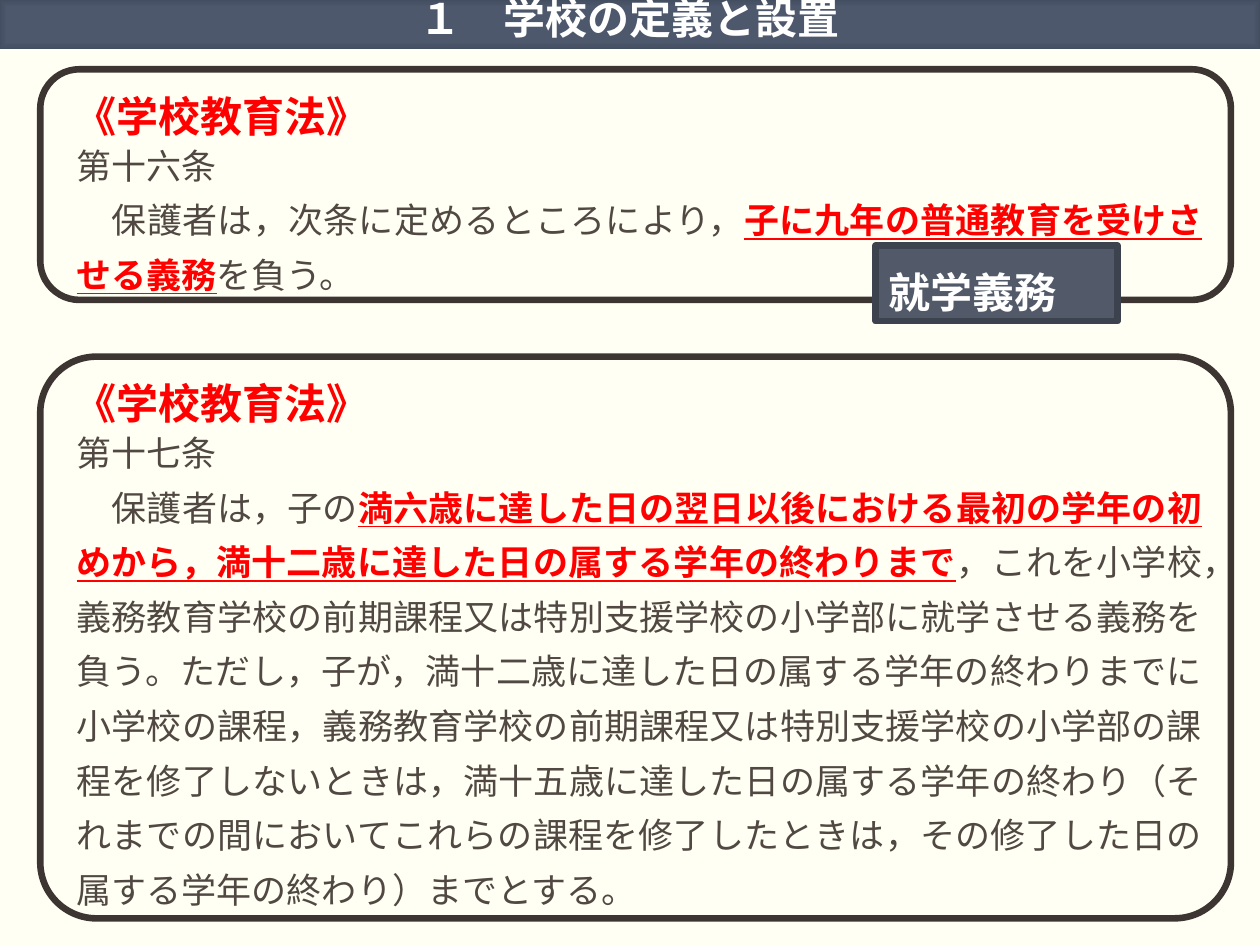
from lxml.etree import SubElement
from pptx import Presentation
from pptx.dml.color import RGBColor
from pptx.enum.shapes import MSO_SHAPE as Shape
from pptx.enum.text import MSO_ANCHOR as Anchor, MSO_AUTO_SIZE as AutoSize, PP_ALIGN as Align
from pptx.oxml.ns import qn
from pptx.util import Pt

RED, WHITE, BODY = "FF0000", "FFFFFF", "514843"
ARTICLE_16 = [
    ("\u3000保護者は，次条に定めるところにより，", False),
    ("子に九年の普通教育を受けさせる義務", True),
    ("を負う。", False),
]
ARTICLE_17 = [
    ("\u3000保護者は，子の", False),
    ("満六歳に達した日の翌日以後における最初の学年の初めから，"
     "満十二歳に達した日の属する学年の終わりまで", True),
    ("，これを小学校，義務教育学校の前期課程又は特別支援学校の小学部に就学させる義務を負う。"
     "ただし，子が，満十二歳に達した日の属する学年の終わりまでに小学校の課程，"
     "義務教育学校の前期課程又は特別支援学校の小学部の課程を修了しないときは，"
     "満十五歳に達した日の属する学年の終わり（それまでの間においてこれらの課程を修了したときは，"
     "その修了した日の属する学年の終わり）までとする。", False),
]


def color(value):
    """Turn a hex string into a colour."""
    return RGBColor.from_string(value)


def style(para, size, ink, bold=False, align=Align.JUSTIFY, spacing=1.3, face="Arial"):
    """Set the alignment, line spacing and font of a paragraph."""
    para.alignment, para.line_spacing = align, spacing
    font = para.font
    font.name, font.size, font.bold = face, Pt(size), bold
    font.color.rgb = color(ink)


def add_box(shapes, kind, left, top, width, height, fill=None, line=None):
    """Add a preset shape with an optional fill and outline."""
    box = shapes.add_shape(kind, Pt(left), Pt(top), Pt(width), Pt(height))
    box.shadow.inherit = False
    if fill:
        box.fill.solid()
        box.fill.fore_color.rgb = color(fill)
    else:
        box.fill.background()
    if line:
        box.line.color.rgb = color(line)
        box.line.width = Pt(3.78)
    else:
        box.line.fill.background()
    return box


def add_text(shapes, left, top, width, height):
    """Add a wrapping text box that grows with its text."""
    frame = shapes.add_textbox(Pt(left), Pt(top), Pt(width), Pt(height)).text_frame
    frame.word_wrap = True
    frame.auto_size = AutoSize.SHAPE_TO_FIT_TEXT
    return frame


def shade_from_center(box, stops):
    """Fill a shape with a rectangular gradient around its centre."""
    box.fill.gradient()
    gradient = box.element.spPr.find(qn("a:gradFill"))
    for child in list(gradient):
        gradient.remove(child)
    stop_list = SubElement(gradient, qn("a:gsLst"))
    for percent, value in stops:
        stop = SubElement(stop_list, qn("a:gs"), pos=str(percent * 1000))
        SubElement(stop, qn("a:srgbClr"), val=value)
    shade = SubElement(gradient, qn("a:path"), path="rect")
    SubElement(shade, qn("a:fillToRect"), l="50000", t="50000", r="50000", b="50000")


def add_title(shapes, text):
    """Add the title band across the top."""
    band = add_box(shapes, Shape.RECTANGLE, 0, 0, 720, 28)
    shade_from_center(band, [(0, "4E596E"), (71, "4D586D"), (100, "444E61")])
    frame = band.text_frame
    frame.margin_left = frame.margin_right = 0
    frame.margin_top = frame.margin_bottom = Pt(3)
    frame.vertical_anchor = Anchor.BOTTOM
    para = frame.paragraphs[0]
    para.text = text
    style(para, 24, WHITE, True, Align.CENTER, 0.9, "Noto Sans CJK JP")


def add_article(slide, top, height, corner, number, passages):
    """Add a framed article of law with its key passages in red."""
    shapes = slide.shapes.add_group_shape().shapes
    frame_box = add_box(shapes, Shape.ROUNDED_RECTANGLE, 23, top, 680.4, height, line="3C3532")
    frame_box.adjustments[0] = corner
    heading = add_text(shapes, 30.2, top, 362, 45.4).paragraphs[0]
    heading.text = "\u00a0《学校教育法》"
    style(heading, 24, RED, True)
    body = add_text(shapes, 36.7, top + 32, 657.4, height - 31)
    body.text = number
    style(body.paragraphs[0], 20, BODY)
    para = body.add_paragraph()
    style(para, 20, BODY)
    for text, is_key in passages:
        span = para.add_run()
        span.text = text
        if is_key:
            span.font.bold = span.font.underline = True
            span.font.color.rgb = color(RED)


def add_tag(shapes, text):
    """Add the label naming the duty."""
    tag = add_box(shapes, Shape.RECTANGLE, 500.4, 140.4, 138.2, 43.2, "525A6A", "3D434E")
    frame = tag.text_frame
    frame.word_wrap = True
    frame.auto_size = AutoSize.SHAPE_TO_FIT_TEXT
    frame.vertical_anchor = Anchor.TOP
    para = frame.paragraphs[0]
    para.text = text
    style(para, 24, WHITE, True)


def main():
    """Build the slide and save it."""
    deck = Presentation()
    deck.slide_width, deck.slide_height = Pt(720), Pt(540)
    page = deck.slides.add_slide(deck.slide_layouts[6])
    page.background.fill.solid()
    page.background.fill.fore_color.rgb = color("FFFFF3")
    add_title(page.shapes, "１\u3000学校の定義と設置")
    add_article(page, 39.6, 131.8, 0.17, "第十六条", ARTICLE_16)
    add_tag(page.shapes, "就学義務")
    add_article(page, 203.8, 321, 0.1, "第十七条", ARTICLE_17)
    deck.save("out.pptx")


if __name__ == "__main__":
    main()
